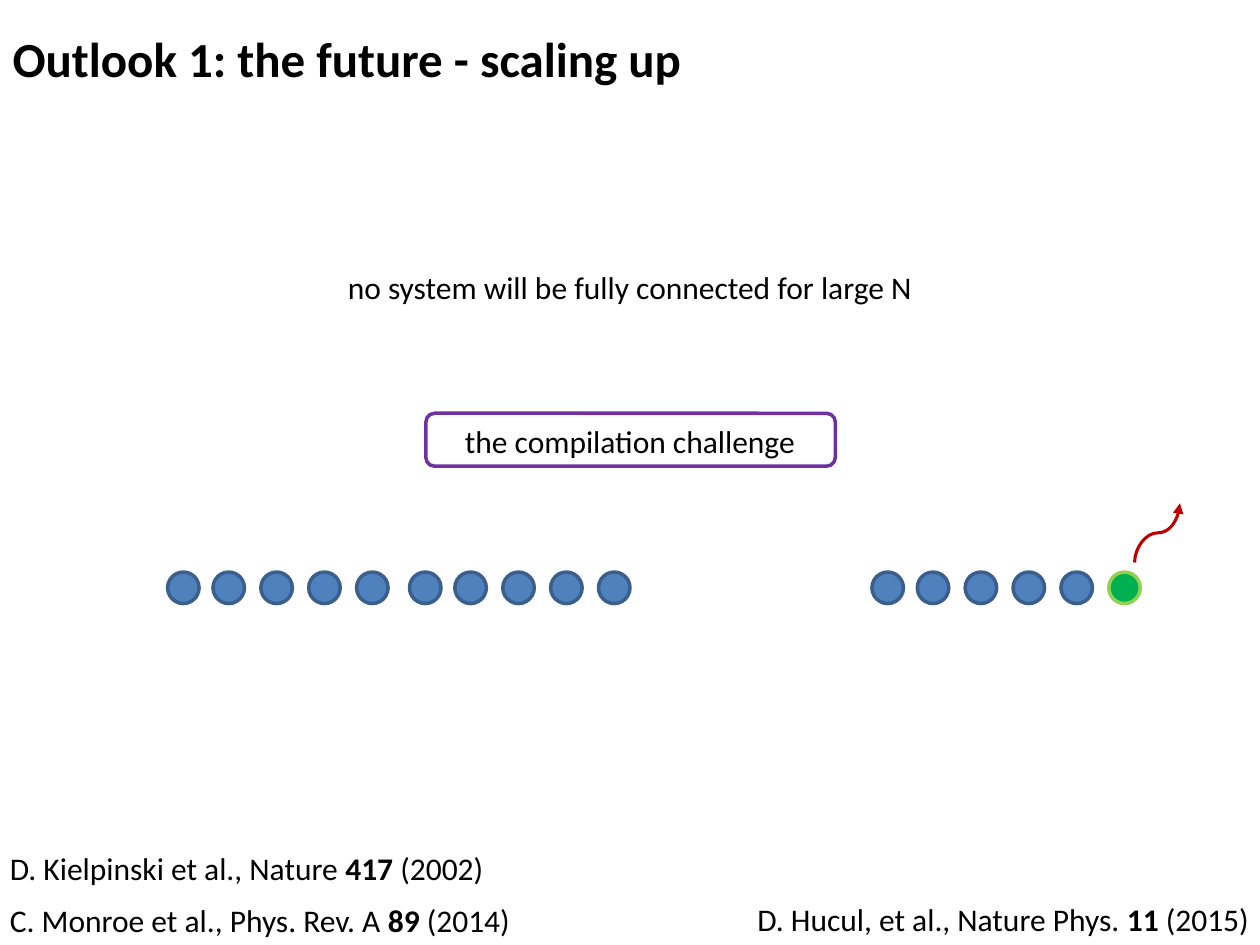
from dataclasses import dataclass
from typing import Any

import pptx
import pptx.dml.color
import pptx.enum.shapes
import pptx.enum.text
import pptx.oxml
import pptx.oxml.ns
import pptx.util

ALIGN = pptx.enum.text.PP_ALIGN
ANCHOR = pptx.enum.text.MSO_ANCHOR
FIT = pptx.enum.text.MSO_AUTO_SIZE
SHAPE = pptx.enum.shapes.MSO_SHAPE
CONNECTOR = pptx.enum.shapes.MSO_CONNECTOR

COLUMNS, ROWS = 100, 75


@dataclass(frozen=True)
class Theme:
    font: str = "Calibri"
    title_size: float = 28
    body_size: float = 18
    outline: float = 2
    arrow_width: float = 1.75
    text: str = "000000"
    frame: str = "7030A0"
    ion: str = "4F81BD"
    ion_edge: str = "3A5F8C"
    emitter: str = "00B050"
    emitter_edge: str = "92D050"
    photon: str = "C00000"


@dataclass(frozen=True)
class Area:
    column: float
    row: float
    columns: float
    rows: float


@dataclass(frozen=True)
class Span:
    text: str
    bold: bool = False


@dataclass(frozen=True)
class Line:
    spans: tuple[Span, ...]
    space_before: float = 0


@dataclass(frozen=True)
class TextBlock:
    area: Area
    lines: tuple[Line, ...]
    align: Any = ALIGN.LEFT
    wrap: bool = True


@dataclass(frozen=True)
class IonChain:
    column: float
    ions: int
    grouped: bool = False
    emits: bool = False


THEME = Theme()
ION_ROW, ION_SIZE = 45.4, 2.5
FIRST_STEP, ION_STEP = 3.6, 3.8

TITLE = TextBlock(Area(0, 0, 90, 9.2), (Line((Span("Outlook 1: the future - scaling up", True),)),))


def citation(area: Area, source: str, volume: str, year: str, **layout: Any) -> TextBlock:
    return TextBlock(area, (Line((Span(source), Span(volume, True), Span(year))),), **layout)


BLOCKS = (
    TextBlock(
        Area(26.3, 20.8, 47.4, 16.2),
        (
            Line((Span("no system will be fully connected for large N"),)),
            Line((Span("the compilation challenge"),), space_before=66),
        ),
        ALIGN.CENTER,
        False,
    ),
    citation(Area(-0.2, 66.9, 50, 4), "D. Kielpinski et al., Nature ", "417 ", "(2002)"),
    citation(Area(-0.2, 71, 50, 4), "C. Monroe et al., Phys. Rev. A ", "89 ", "(2014)"),
    citation(Area(58, 70.9, 42.1, 4), "D. Hucul, et al., Nature Phys. ", "11 ", "(2015)",
             align=ALIGN.RIGHT, wrap=False),
)
CHAINS = (
    IonChain(13.3, 5),
    IonChain(32.5, 5, grouped=True),
    IonChain(69.2, 6, emits=True),
)
FRAME = Area(33.8, 32.8, 32.5, 4.2)
PHOTON = Area(89.5, 40.5, 4.7, 3.6)


def apply(target: Any, values: dict[str, Any]) -> None:
    for name, value in values.items():
        setattr(target, name, value)


def color(value: str) -> pptx.dml.color.RGBColor:
    return pptx.dml.color.RGBColor.from_string(value)


def place(deck: Any, area: Area) -> tuple[int, int, int, int]:
    across, down = deck.slide_width / COLUMNS, deck.slide_height / ROWS
    return (round(area.column * across), round(area.row * down),
            round(area.columns * across), round(area.rows * down))


def write(box: Any, block: TextBlock, size: float, frame_format: dict[str, Any]) -> None:
    frame = box.text_frame
    apply(frame, {"word_wrap": block.wrap, **frame_format})
    for index, line in enumerate(block.lines):
        para = frame.add_paragraph() if index else frame.paragraphs[0]
        para.alignment = block.align
        if line.space_before:
            para.space_before = pptx.util.Pt(line.space_before)
        for span in line.spans:
            run = para.add_run()
            run.text = span.text
            apply(run.font, {"name": THEME.font, "size": pptx.util.Pt(size), "bold": span.bold})
            run.font.color.rgb = color(THEME.text)


def draw_title(deck: Any, slide: Any) -> None:
    title = slide.shapes.title
    apply(title, dict(zip(("left", "top", "width", "height"), place(deck, TITLE.area))))
    write(title, TITLE, THEME.title_size,
          {"vertical_anchor": ANCHOR.MIDDLE, "auto_size": FIT.NONE})


def draw_shape(deck: Any, shapes: Any, kind: Any, area: Area, edge: str, fill: str = "") -> None:
    shape = shapes.add_shape(kind, *place(deck, area))
    shape.shadow.inherit = False
    if fill:
        shape.fill.solid()
        shape.fill.fore_color.rgb = color(fill)
    else:
        shape.fill.background()
    shape.line.color.rgb = color(edge)
    shape.line.width = pptx.util.Pt(THEME.outline)


def draw_chain(deck: Any, slide: Any, chain: IonChain) -> None:
    shapes = slide.shapes.add_group_shape().shapes if chain.grouped else slide.shapes
    for index in range(chain.ions):
        offset = FIRST_STEP + ION_STEP * (index - 1) if index else 0
        emitter = chain.emits and index == chain.ions - 1
        draw_shape(deck, shapes, SHAPE.OVAL,
                   Area(chain.column + offset, ION_ROW, ION_SIZE, ION_SIZE),
                   THEME.emitter_edge if emitter else THEME.ion_edge,
                   THEME.emitter if emitter else THEME.ion)


def draw_photon(deck: Any, slide: Any) -> None:
    left, top, width, height = place(deck, PHOTON)
    arrow = slide.shapes.add_connector(CONNECTOR.CURVE, left + width, top + height, left, top)
    arrow.line.color.rgb = color(THEME.photon)
    arrow.line.width = pptx.util.Pt(THEME.arrow_width)
    properties = arrow._element.spPr
    properties.find(pptx.oxml.ns.qn("a:xfrm")).set("rot", str(90 * 60000))
    head = pptx.oxml.parse_xml(f'<a:tailEnd {pptx.oxml.ns.nsdecls("a")} type="triangle"/>')
    properties.find(pptx.oxml.ns.qn("a:ln")).append(head)
    properties.append(pptx.oxml.parse_xml(f'<a:effectLst {pptx.oxml.ns.nsdecls("a")}/>'))


def main() -> None:
    deck = pptx.Presentation()
    apply(deck, {"slide_width": pptx.util.Inches(10), "slide_height": pptx.util.Inches(7.5)})
    slide = deck.slides.add_slide(deck.slide_layouts.get_by_name("Title Only"))
    draw_title(deck, slide)
    for block in BLOCKS:
        box = slide.shapes.add_textbox(*place(deck, block.area))
        write(box, block, THEME.body_size, {"auto_size": FIT.SHAPE_TO_FIT_TEXT})
    draw_shape(deck, slide.shapes, SHAPE.ROUNDED_RECTANGLE, FRAME, THEME.frame)
    for chain in CHAINS:
        draw_chain(deck, slide, chain)
    draw_photon(deck, slide)
    deck.save("out.pptx")


if __name__ == "__main__":
    main()
